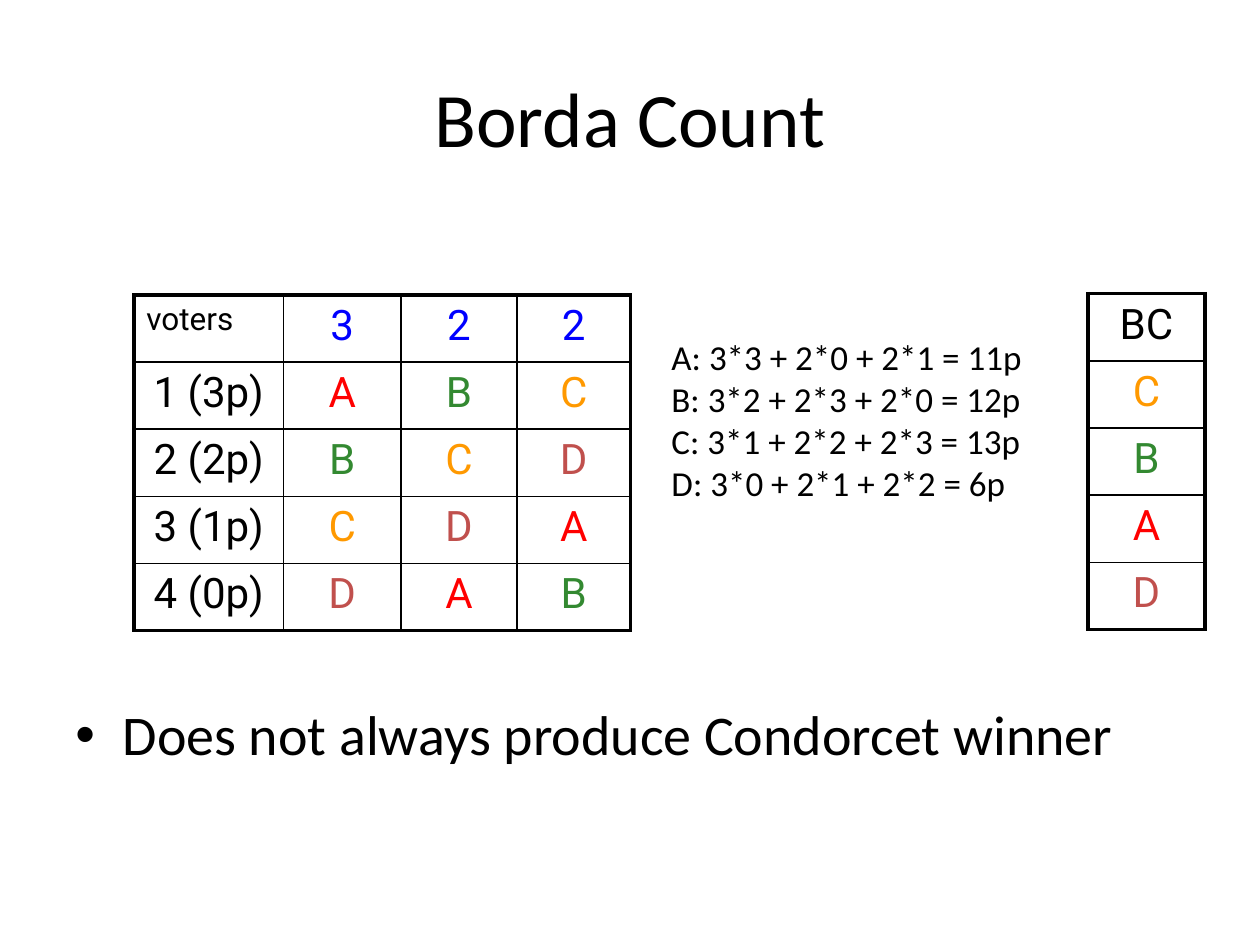
from dataclasses import dataclass

from lxml import etree
from pptx import Presentation
from pptx.dml.color import RGBColor
from pptx.enum import text as t
from pptx.oxml import ns
from pptx.util import Pt


@dataclass(frozen=True)
class Theme:
    ink: str = "000000"
    count: str = "0000FF"
    a: str = "FF0000"
    b: str = "338931"
    c: str = "FF9900"
    d: str = "C0504D"
    body_font: str = "Calibri"
    table_font: str = "Roboto"
    title: int = 44
    bullet: int = 32
    cell: int = 24
    score: int = 20
    label: int = 18
    outer: float = 2.25
    inner: float = 1


theme = Theme()
candidate_colors = {"A": theme.a, "B": theme.b, "C": theme.c, "D": theme.d}


def style(paragraph, size, color=theme.ink, font=theme.body_font, align=t.PP_ALIGN.LEFT):
    paragraph.alignment = align
    for run in paragraph.runs:
        run.font.size = Pt(size)
        run.font.name = font
        run.font.color.rgb = RGBColor.from_string(color)


def add_ranking(left, top, widths, row_height, rows):
    last_row, last_col = len(rows) - 1, len(widths) - 1
    table = slide.shapes.add_table(
        len(rows), len(widths), Pt(left), Pt(top), Pt(sum(widths)), Pt(row_height * len(rows))
    ).table
    table.first_row = table.horz_banding = False
    for column, width in zip(table.columns, widths):
        column.width = Pt(width)
    for r, row in enumerate(rows):
        table.rows[r].height = Pt(row_height)
        for c, entry in enumerate(row):
            cell = table.cell(r, c)
            cell.text = entry
            color = theme.count if entry.isdigit() else candidate_colors.get(entry, theme.ink)
            if entry == "voters":
                style(cell.text_frame.paragraphs[0], theme.label, color, theme.table_font)
            else:
                style(cell.text_frame.paragraphs[0], theme.cell, color, theme.table_font,
                      t.PP_ALIGN.CENTER)
            properties = cell._tc.get_or_add_tcPr()
            edges = {"L": c == 0, "R": c == last_col, "T": r == 0, "B": r == last_row}
            for side, is_outer in edges.items():
                width = Pt(theme.outer if is_outer else theme.inner)
                line = etree.SubElement(properties, ns.qn(f"a:ln{side}"), w=str(int(width)))
                fill = etree.SubElement(line, ns.qn("a:solidFill"))
                etree.SubElement(fill, ns.qn("a:srgbClr"), val=theme.ink)
            cell.fill.background()


deck = Presentation()
deck.slide_width, deck.slide_height = Pt(720), Pt(540)
slide = deck.slides.add_slide(deck.slide_layouts[6])

title = slide.shapes.add_textbox(Pt(36), Pt(21.6), Pt(648), Pt(90)).text_frame
title.word_wrap = True
title.vertical_anchor = t.MSO_ANCHOR.MIDDLE
title.text = "Borda Count"
style(title.paragraphs[0], theme.title, align=t.PP_ALIGN.CENTER)

conclusion = slide.shapes.add_textbox(Pt(36), Pt(126), Pt(648), Pt(369)).text_frame
conclusion.word_wrap = True
conclusion.margin_top = Pt(274)
conclusion.text = "Does not always produce Condorcet winner"
style(conclusion.paragraphs[0], theme.bullet)
bullet = conclusion.paragraphs[0]._p.get_or_add_pPr()
bullet.set("marL", str(int(Pt(27))))
bullet.set("indent", str(int(Pt(-27))))
etree.SubElement(bullet, ns.qn("a:buFont"), typeface="Arial")
etree.SubElement(bullet, ns.qn("a:buChar"), char="•")

add_ranking(76.5, 168.5, [85.6, 67, 66.4, 64.8], 38.4, [
    ["voters", "3", "2", "2"],
    ["1 (3p)", "A", "B", "C"],
    ["2 (2p)", "B", "C", "D"],
    ["3 (1p)", "C", "D", "A"],
    ["4 (0p)", "D", "A", "B"],
])

scores = slide.shapes.add_textbox(Pt(376.6), Pt(188), Pt(231), Pt(103)).text_frame
scores.word_wrap = False
scores.auto_size = t.MSO_AUTO_SIZE.SHAPE_TO_FIT_TEXT
scores.text = "\n".join([
    "A: 3*3 + 2*0 + 2*1 = 11p",
    "B: 3*2 + 2*3 + 2*0 = 12p",
    "C: 3*1 + 2*2 + 2*3 = 13p",
    "D: 3*0 + 2*1 + 2*2 = 6p",
])
for score in scores.paragraphs:
    style(score, theme.score)

add_ranking(621.6, 167.8, [67], 38.4, [["BC"], ["C"], ["B"], ["A"], ["D"]])

deck.save("out.pptx")
